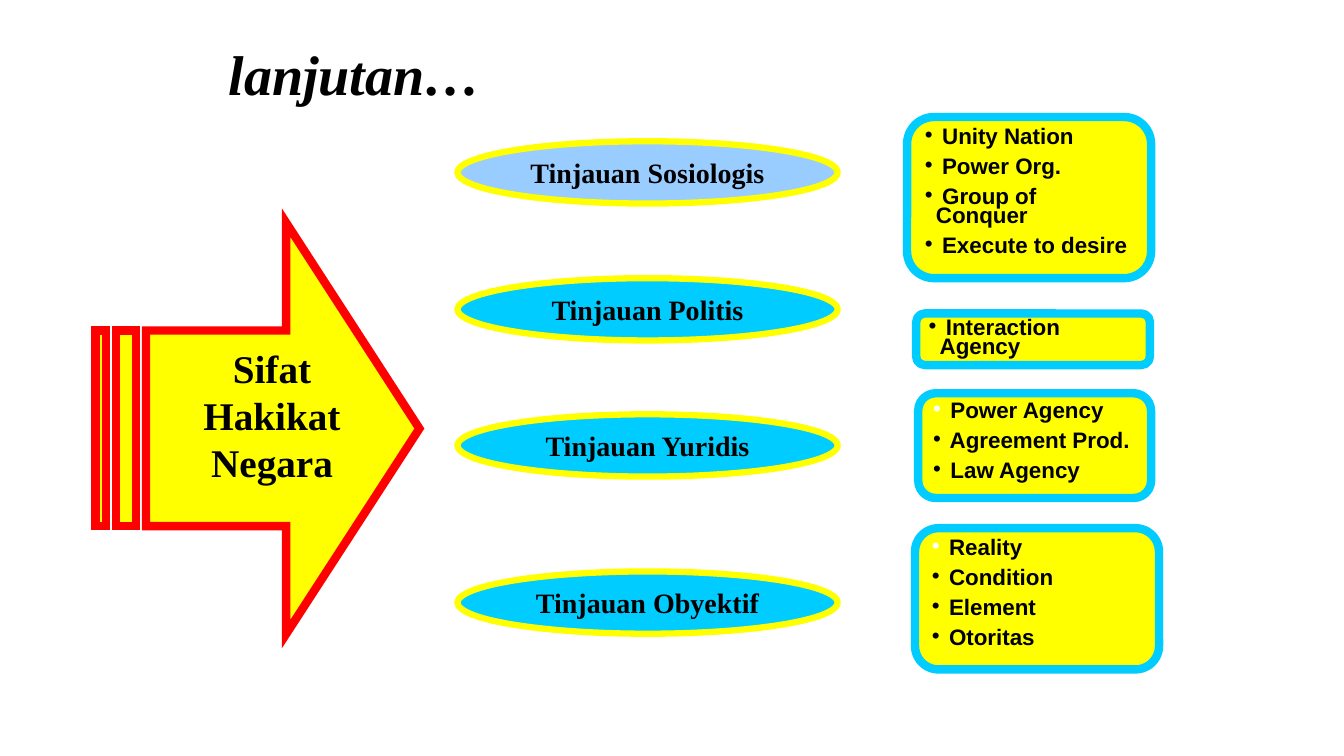
from dataclasses import dataclass

from lxml import etree
from pptx import Presentation
from pptx.dml.color import RGBColor
from pptx.enum.shapes import MSO_SHAPE
from pptx.enum.text import MSO_ANCHOR, PP_ALIGN
from pptx.oxml.ns import qn
from pptx.util import Cm, Pt

OVAL, ROUND = MSO_SHAPE.OVAL, MSO_SHAPE.ROUNDED_RECTANGLE
TOP, MIDDLE = MSO_ANCHOR.TOP, MSO_ANCHOR.MIDDLE
LEFT, CENTER = PP_ALIGN.LEFT, PP_ALIGN.CENTER

SERIF, SANS = "Times New Roman", "Arial"
BLACK, WHITE, YELLOW = "000000", "FFFFFF", "FFFF00"
RED, CYAN, PALE = "FF0000", "00CCFF", "99CCFF"


@dataclass
class View:
    """One point of view: an oval with its list of traits."""
    label: str
    top: float
    fill: str
    box: tuple[float, float, float, float]
    items: list[str]
    first: str = BLACK  # colour of the first bullet


VIEWS = [
    View("Tinjauan Sosiologis", 3.56, PALE, (22.86, 2.95, 6.15, 4.06),
         ["Unity Nation", "Power Org.", "Group of Conquer", "Execute to desire"]),
    View("Tinjauan Politis", 7.01, CYAN, (23.09, 7.9, 5.89, 1.3),
         ["Interaction Agency"]),
    View("Tinjauan Yuridis", 10.44, CYAN, (23.14, 9.91, 5.87, 2.64),
         ["Power Agency", "Agreement Prod.", "Law Agency"], WHITE),
    View("Tinjauan Obyektif", 14.4, CYAN, (23.06, 13.31, 6.15, 3.56),
         ["Reality", "Condition", "Element", "Otoritas"], WHITE),
]

NECK, FOOT = 8.33, 13.26
HEAD = [(7.21, 5.61), (7.21, NECK), (3.68, NECK), (3.68, FOOT),
        (7.21, FOOT), (7.21, 15.98), (10.57, 10.8)]
BARS = [(2.92, 3.43), (2.41, 2.67)]


def color(code: str) -> RGBColor:
    return RGBColor.from_string(code)


def paint(shape, fill: str, line: str, width: float) -> None:
    shape.shadow.inherit = False
    shape.fill.solid()
    shape.fill.fore_color.rgb = color(fill)
    shape.line.fill.solid()
    shape.line.color.rgb = color(line)
    shape.line.width = Pt(width)


def style(para, font: str, size: float, align=LEFT, italic: bool = False) -> None:
    para.alignment = align
    for run in para.runs:
        run.font.name = font
        run.font.size = Pt(size)
        run.font.bold = True
        run.font.italic = italic
        run.font.color.rgb = color(BLACK)


def add_text(slide, text: str, box: tuple, size: float, anchor,
             align=LEFT, italic: bool = False) -> None:
    frame = slide.shapes.add_textbox(*map(Cm, box)).text_frame
    frame.word_wrap = True
    frame.vertical_anchor = anchor
    frame.text = text
    style(frame.paragraphs[0], SERIF, size, align, italic)


def add_arrow(slide) -> None:
    bars = [[(a, NECK), (a, FOOT), (b, FOOT), (b, NECK)] for a, b in BARS]
    start, *rest = [[(Cm(x), Cm(y)) for x, y in ring] for ring in [HEAD, *bars]]
    maker = slide.shapes.build_freeform(*start[0])
    maker.add_line_segments(start[1:], close=True)
    for ring in rest:
        maker.move_to(*ring[0])
        maker.add_line_segments(ring[1:], close=True)
    arrow = maker.convert_to_shape()
    paint(arrow, YELLOW, RED, 6)
    line = arrow.line.fill._xPr
    etree.SubElement(line, qn("a:miter"), lim="800000")


def add_oval(slide, view: View) -> None:
    oval = slide.shapes.add_shape(OVAL, Cm(11.53), Cm(view.top), Cm(9.58), Cm(1.57))
    paint(oval, view.fill, YELLOW, 4.5)
    frame = oval.text_frame
    frame.word_wrap = True
    frame.vertical_anchor = MIDDLE
    frame.text = view.label
    style(frame.paragraphs[0], SERIF, 20, CENTER)


def add_bullet(para, tint: str) -> None:
    props = para._p.get_or_add_pPr()
    props.set("marL", str(Cm(0.28)))
    props.set("indent", str(-Cm(0.28)))
    ink = etree.SubElement(props, qn("a:buClr"))
    etree.SubElement(ink, qn("a:srgbClr"), val=tint)
    etree.SubElement(props, qn("a:buFont"), typeface=SANS)
    etree.SubElement(props, qn("a:buChar"), char="•")


def add_list(slide, view: View) -> None:
    card = slide.shapes.add_shape(ROUND, *map(Cm, view.box))
    paint(card, YELLOW, CYAN, 6)
    frame = card.text_frame
    frame.word_wrap = True
    frame.vertical_anchor = TOP
    frame.text = "\n".join(f" {item}" for item in view.items)
    for i, para in enumerate(frame.paragraphs):
        add_bullet(para, BLACK if i else view.first)
        para.line_spacing = 0.7
        para.space_before = Pt(8 if i else 0)
        style(para, SANS, 16)


def main() -> None:
    deck = Presentation()
    deck.slide_width, deck.slide_height = Cm(33.87), Cm(19.05)
    slide = deck.slides.add_slide(deck.slide_layouts[6])
    add_text(slide, "lanjutan…", (5.51, 0.56, 21.59, 2.54), 40, MIDDLE, italic=True)
    add_arrow(slide)
    add_text(slide, "Sifat Hakikat Negara", (3.86, 8.56, 5.99, 5.64), 28, TOP, CENTER)
    for view in VIEWS:
        add_oval(slide, view)
        add_list(slide, view)
    deck.save("out.pptx")


if __name__ == "__main__":
    main()
